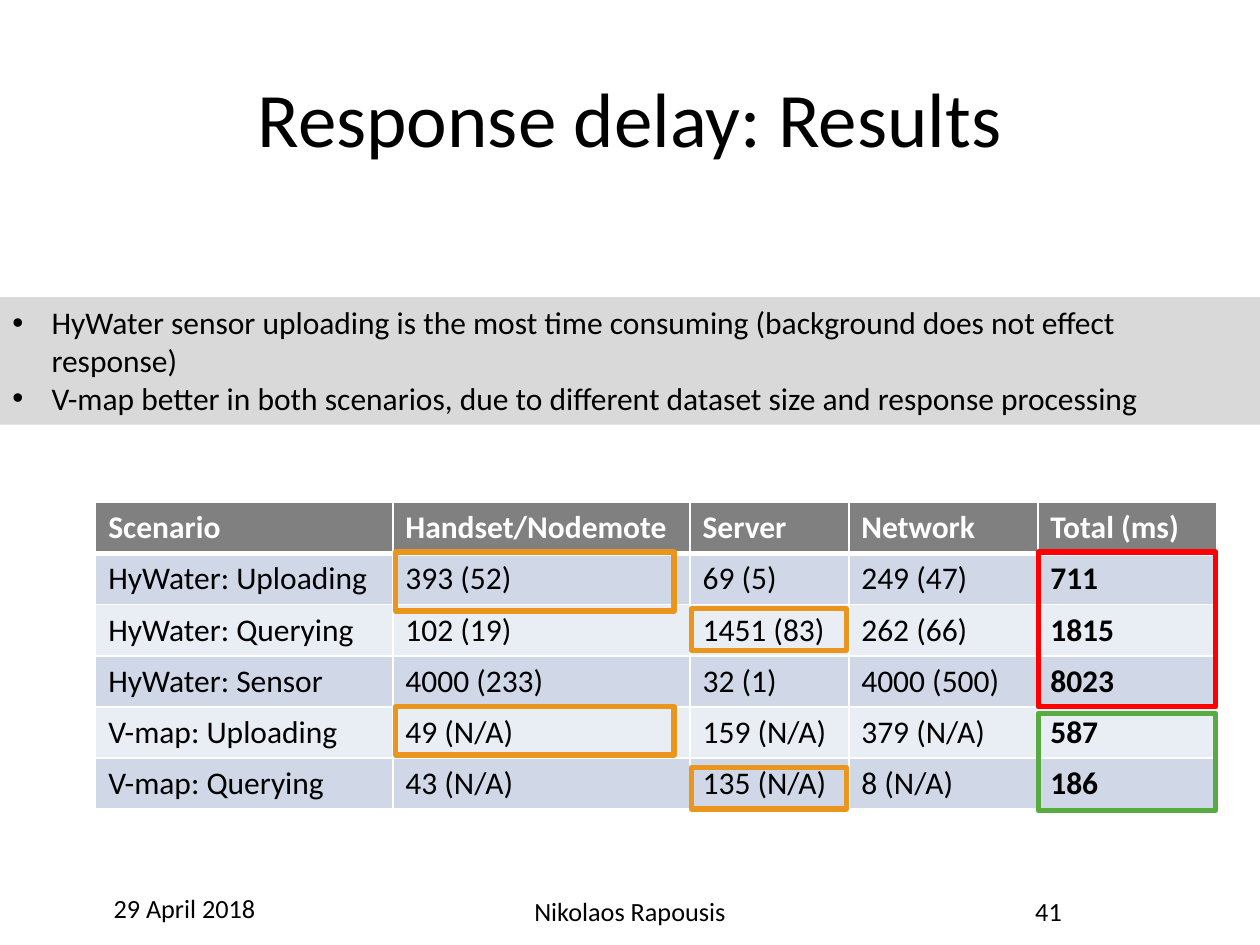
from lxml import etree
from pptx import Presentation
from pptx.dml.color import RGBColor
from pptx.enum.shapes import MSO_SHAPE
from pptx.enum.text import MSO_ANCHOR, PP_ALIGN
from pptx.oxml.ns import qn
from pptx.util import Cm, Pt

RECTANGLE = MSO_SHAPE.RECTANGLE
TOP, MIDDLE = MSO_ANCHOR.TOP, MSO_ANCHOR.MIDDLE
LEFT, CENTER = PP_ALIGN.LEFT, PP_ALIGN.CENTER
BLACK, WHITE = "000000", "FFFFFF"
HEADER_FILL, BAND_FILLS = "808080", ("D0D8E8", "E9EDF4")
RED, GREEN, ORANGE = "FF0000", "56AC40", "EA961C"


def rgb(value):
    return RGBColor.from_string(value)


def write(para, text, size=18, color=BLACK, bold=False, align=LEFT):
    para.alignment = align
    span = para.add_run()
    span.text = text
    span.font.name = "Calibri"
    span.font.size = Pt(size)
    span.font.bold = bold
    span.font.color.rgb = rgb(color)


deck = Presentation()
deck.slide_width, deck.slide_height = Cm(25.4), Cm(19.05)
page = deck.slides.add_slide(deck.slide_layouts[5])
shapes = page.shapes

# Title
title = shapes.title
title.left, title.top, title.width, title.height = Cm(1.27), Cm(0.76), Cm(22.86), Cm(3.18)
title.text_frame.vertical_anchor = MIDDLE
write(title.text_frame.paragraphs[0], "Response delay: Results", size=44, align=CENTER)

# Delay table
rows = [
    ("Scenario", "Handset/Nodemote", "Server", "Network", "Total (ms)"),
    ("HyWater: Uploading", "393 (52)", "69 (5)", "249 (47)", "711"),
    ("HyWater: Querying", "102 (19)", "1451 (83)", "262 (66)", "1815"),
    ("HyWater: Sensor", "4000 (233)", "32 (1)", "4000 (500)", "8023"),
    ("V-map: Uploading", "49 (N/A)", "159 (N/A)", "379 (N/A)", "587"),
    ("V-map: Querying", "43 (N/A)", "135 (N/A)", "8 (N/A)", "186"),
]
column_widths = (5.99, 5.99, 3.2, 3.81, 3.61)
row_height = 1.03
table = shapes.add_table(
    len(rows), len(column_widths), Cm(1.93), Cm(10.13),
    Cm(sum(column_widths)), Cm(row_height * len(rows)),
).table
for column, width in zip(table.columns, column_widths):
    column.width = Cm(width)
for r, row in enumerate(rows):
    table.rows[r].height = Cm(row_height)
    is_header = r == 0
    for c, text in enumerate(row):
        cell = table.cell(r, c)
        is_total = c == len(row) - 1
        write(cell.text_frame.paragraphs[0], text,
              color=WHITE if is_header else BLACK, bold=is_header or is_total)
        properties = cell._tc.get_or_add_tcPr()
        for side in ("lnL", "lnR", "lnT", "lnB"):
            thick = (is_header and side == "lnB") or (r == 1 and side == "lnT")
            border = etree.SubElement(properties, qn(f"a:{side}"), w=str(Pt(3 if thick else 1)))
            border_fill = etree.SubElement(border, qn("a:solidFill"))
            etree.SubElement(border_fill, qn("a:srgbClr"), val=WHITE)
        cell.fill.solid()
        cell.fill.fore_color.rgb = rgb(HEADER_FILL if is_header else BAND_FILLS[(r - 1) % 2])

# Findings band
findings = [
    "HyWater sensor uploading is the most time consuming (background does not effect response)",
    "V-map better in both scenarios, due to different dataset size and response processing",
]
band = shapes.add_shape(RECTANGLE, Cm(0), Cm(5.99), Cm(25.4), Cm(2.57))
band.shadow.inherit = False
band.fill.solid()
band.fill.fore_color.rgb = rgb("D9D9D9")
band.line.fill.background()
band.text_frame.word_wrap = True
band.text_frame.vertical_anchor = TOP
for i, finding in enumerate(findings):
    para = band.text_frame.add_paragraph() if i else band.text_frame.paragraphs[0]
    write(para, finding)
    properties = para._p.get_or_add_pPr()
    properties.set("marL", str(Cm(0.79)))
    properties.set("indent", str(-Cm(0.79)))
    etree.SubElement(properties, qn("a:buFont"), typeface="Arial")
    etree.SubElement(properties, qn("a:buChar"), char="•")

# Footer: date, author, page number
for text, left, width, align in [
    ("29 April 2018", 2.29, 5.16, LEFT),
    ("Nikolaos Rapousis", 7.67, 10.06, CENTER),
    ("41", 20.62, 2.74, LEFT),
]:
    box = shapes.add_textbox(Cm(left), Cm(17.93), Cm(width), Cm(1.02))
    box.text_frame.word_wrap = True
    para = box.text_frame.paragraphs[0]
    write(para, text, size=15, align=align)
    if text == "29 April 2018":
        box.text_frame.margin_left = box.text_frame.margin_right = 0
        para.line_spacing = 0.9
        para.space_before, para.space_after = Pt(12), Pt(2)

# Frames around the notable values
for left, top, width, height, color in [
    (20.93, 11.13, 3.58, 3.12, RED),
    (20.93, 14.38, 3.58, 1.96, GREEN),
    (7.98, 11.13, 5.61, 1.19, ORANGE),
    (7.98, 14.25, 5.61, 0.97, ORANGE),
    (13.94, 12.27, 3.12, 0.84, ORANGE),
    (13.94, 15.47, 3.12, 0.84, ORANGE),
]:
    frame = shapes.add_shape(RECTANGLE, Cm(left), Cm(top), Cm(width), Cm(height))
    frame.shadow.inherit = False
    frame.fill.background()
    frame.line.color.rgb = rgb(color)
    frame.line.width = Pt(3)
    etree.SubElement(frame.line._get_or_add_ln(), qn("a:round"))

deck.save("out.pptx")
